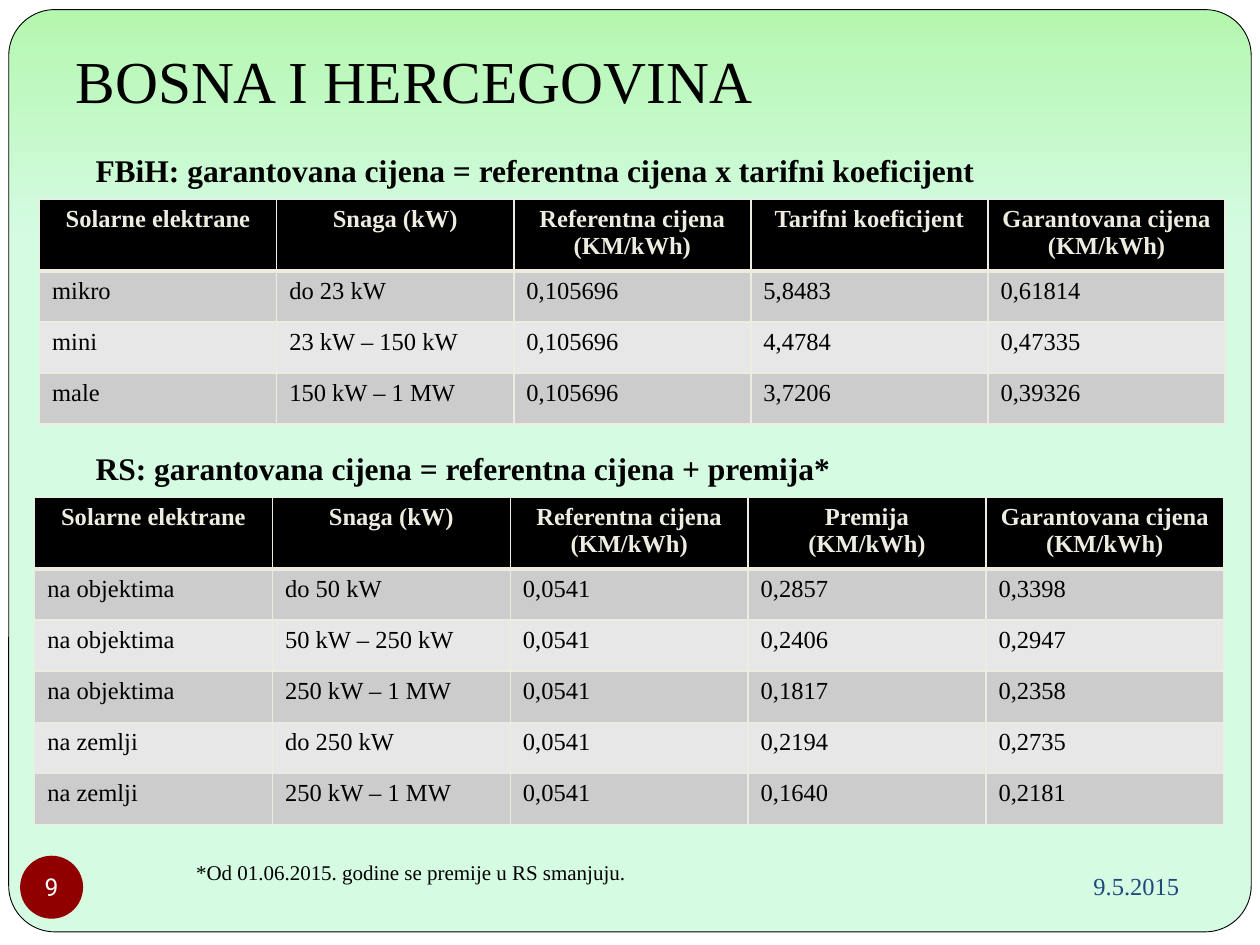
from lxml.etree import SubElement
from pptx import Presentation
from pptx.dml.color import RGBColor
from pptx.enum.shapes import MSO_SHAPE
from pptx.enum.text import MSO_ANCHOR, PP_ALIGN
from pptx.oxml.ns import qn
from pptx.util import Pt

COLORS = {
    "white": "FFFFFF", "black": "000000", "mint": "D5FBE3", "green": "B4F7AF",
    "cream": "EEECE1", "dark_row": "CCCCCC", "light_row": "E7E7E7",
    "red": "900000", "navy": "1F497D",
}
SERIF = "Times New Roman"

FBIH_ROWS = [
    ["Solarne elektrane", "Snaga (kW)", "Referentna cijena (KM/kWh)",
     "Tarifni koeficijent", "Garantovana cijena (KM/kWh)"],
    ["mikro", "do 23 kW", "0,105696", "5,8483", "0,61814"],
    ["mini", "23 kW – 150 kW", "0,105696", "4,4784", "0,47335"],
    ["male", "150 kW – 1 MW", "0,105696", "3,7206", "0,39326"],
]
RS_ROWS = [
    ["Solarne elektrane", "Snaga (kW)", "Referentna cijena (KM/kWh)",
     "Premija\n(KM/kWh)", "Garantovana cijena (KM/kWh)"],
    ["na objektima", "do 50 kW", "0,0541", "0,2857", "0,3398"],
    ["na objektima", "50 kW – 250 kW", "0,0541", "0,2406", "0,2947"],
    ["na objektima", "250 kW – 1 MW", "0,0541", "0,1817", "0,2358"],
    ["na zemlji", "do 250 kW", "0,0541", "0,2194", "0,2735"],
    ["na zemlji", "250 kW – 1 MW", "0,0541", "0,1640", "0,2181"],
]


def rgb(name):
    """Return the named palette colour."""
    return RGBColor.from_string(COLORS[name])


def write(tf, text, size=14, font=SERIF, color="black", bold=False,
          align=PP_ALIGN.LEFT, anchor=MSO_ANCHOR.TOP):
    """Fill a text frame with one formatted paragraph per line of text."""
    tf.word_wrap = True
    tf.vertical_anchor = anchor
    for i, line in enumerate(text.split("\n")):
        p = tf.add_paragraph() if i else tf.paragraphs[0]
        p.alignment = align
        r = p.add_run()
        r.text = line
        r.font.size, r.font.name, r.font.bold = Pt(size), font, bold
        r.font.color.rgb = rgb(color)


def add_text(s, box, text, **fmt):
    """Place a text box in the given box."""
    write(s.shapes.add_textbox(*map(Pt, box)).text_frame, text, **fmt)


def add_panel(s, box):
    """Place the rounded gradient panel behind all other shapes."""
    sp = s.shapes.add_shape(MSO_SHAPE.ROUNDED_RECTANGLE, *map(Pt, box))
    sp.adjustments[0] = 0.05
    sp.shadow.inherit = False
    sp.fill.gradient()
    sp.fill.gradient_angle = 90
    stops = [("mint", 0.75), ("green", 1)]
    for stop, (color, position) in zip(sp.fill.gradient_stops, stops):
        stop.color.rgb = rgb(color)
        stop.position = position
    sp.line.color.rgb = rgb("black")
    sp.line.width = Pt(0.5)
    s.shapes.title.element.addprevious(sp.element)


def add_title(s, box, text):
    """Move the title placeholder to the box and write the title."""
    sp = s.shapes.title
    sp.left, sp.top, sp.width, sp.height = map(Pt, box)
    write(sp.text_frame, text, size=34)


def set_borders(cell, bottom):
    """Draw thin cream borders with the given bottom width in points."""
    tcPr = cell._tc.get_or_add_tcPr()
    for i, (side, width) in enumerate(
            [("L", 1), ("R", 1), ("T", 1), ("B", bottom)]):
        ln = SubElement(tcPr, qn(f"a:ln{side}"), w=str(Pt(width)))
        fill = SubElement(ln, qn("a:solidFill"))
        SubElement(fill, qn("a:srgbClr"), val=COLORS["cream"])
        tcPr.remove(ln)
        tcPr.insert(i, ln)


def add_tariffs(s, box, rows, header_height=40.5):
    """Place a tariff table with a black header and banded rows."""
    left, top, width, height = box
    table = s.shapes.add_table(
        len(rows), len(rows[0]), *map(Pt, box)).table
    for col in table.columns:
        col.width = Pt(width / len(rows[0]))
    row_height = (height - header_height) / (len(rows) - 1)
    for i, row in enumerate(rows):
        table.rows[i].height = Pt(row_height if i else header_height)
        for j, text in enumerate(row):
            cell = table.cell(i, j)
            cell.fill.solid()
            if i == 0:
                cell.fill.fore_color.rgb = rgb("black")
                write(cell.text_frame, text, color="cream", bold=True,
                      align=PP_ALIGN.CENTER)
            else:
                cell.fill.fore_color.rgb = rgb(
                    "dark_row" if i % 2 else "light_row")
                write(cell.text_frame, text)
            cell.vertical_anchor = MSO_ANCHOR.TOP
            set_borders(cell, bottom=1 if i else 3)


def add_section(s, box, heading, rows):
    """Place a bold formula heading with its tariff table below."""
    left, top, width, height = box
    add_text(s, (47.5, top, 613, 29), heading, size=18, bold=True,
             align=PP_ALIGN.JUSTIFY)
    add_tariffs(s, (left, top + 31, width, height - 31), rows)


def add_page_number(s, box, number):
    """Place the slide number in a red disc."""
    sp = s.shapes.add_shape(MSO_SHAPE.OVAL, *map(Pt, box))
    sp.shadow.inherit = False
    sp.fill.solid()
    sp.fill.fore_color.rgb = rgb("red")
    sp.line.fill.background()
    tf = sp.text_frame
    tf.margin_left = tf.margin_right = tf.margin_top = tf.margin_bottom = 0
    write(tf, number, font="Roboto", color="white", align=PP_ALIGN.CENTER,
          anchor=MSO_ANCHOR.MIDDLE)
    tf.word_wrap = False


def main():
    """Build the tariff slide and save it."""
    prs = Presentation()
    prs.slide_width, prs.slide_height = Pt(720), Pt(540)
    s = prs.slides.add_slide(prs.slide_layouts[5])
    s.background.fill.solid()
    s.background.fill.fore_color.rgb = rgb("white")
    add_panel(s, (5, 5.5, 710, 527))
    add_title(s, (36, 21.6, 588, 40.3), "BOSNA I HERCEGOVINA")
    add_section(
        s, (22.6, 83, 677.5, 159),
        "FBiH: garantovana cijena = referentna cijena x tarifni koeficijent",
        FBIH_ROWS)
    add_section(
        s, (19.8, 253.3, 679.5, 217.5),
        "RS: garantovana cijena = referentna cijena + premija*", RS_ROWS)
    add_text(s, (105, 487.5, 471, 21.6),
             "*Od 01.06.2015. godine se premije u RS smanjuju.", size=12)
    add_page_number(s, (11.5, 489, 36, 36), "9")
    add_text(s, (486, 487.5, 195, 37.5), "9.5.2015", color="navy",
             align=PP_ALIGN.RIGHT, anchor=MSO_ANCHOR.MIDDLE)
    prs.save("out.pptx")


if __name__ == "__main__":
    main()
